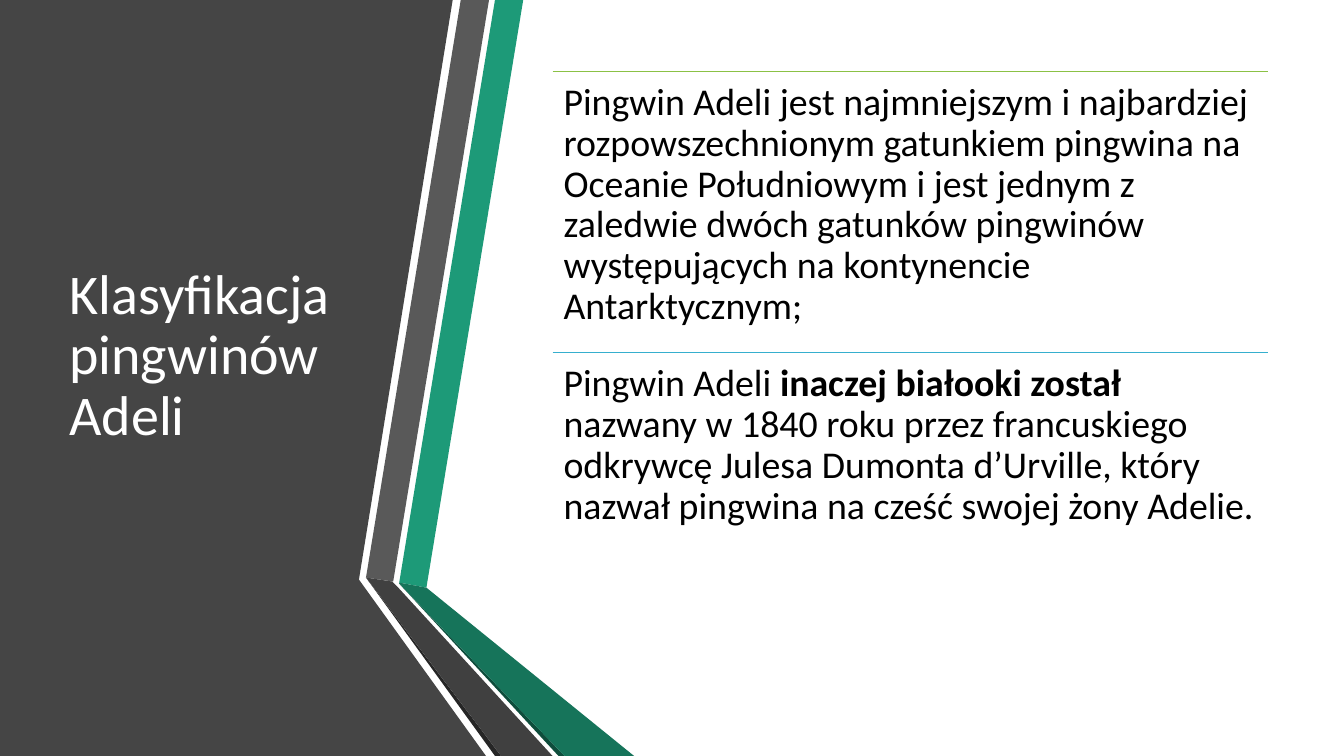
from lxml.etree import SubElement
from pptx import Presentation
from pptx.dml.color import RGBColor
from pptx.enum.shapes import MSO_CONNECTOR as CONN
from pptx.enum.text import MSO_ANCHOR as ANCHOR
from pptx.oxml.ns import qn
from pptx.util import Inches, Pt


def rgb(hex_color):
    return RGBColor.from_string(hex_color)


def add_text(box, runs, size, color, inset=0.1, anchor=ANCHOR.TOP, after=0):
    tf = s.shapes.add_textbox(*[Inches(v) for v in box]).text_frame
    tf.word_wrap = True
    tf.vertical_anchor = anchor
    tf.margin_left = tf.margin_right = Inches(inset)
    tf.margin_top = tf.margin_bottom = Inches(inset)
    p = tf.paragraphs[0]
    p.line_spacing = 0.9
    p.space_after = Pt(after)
    for text, bold in runs:
        r = p.add_run()
        r.text = text
        r.font.name = "Calibri"
        r.font.size = Pt(size)
        r.font.bold = bold
        r.font.color.rgb = rgb(color)


W, H = 13.33, 7.5
prs = Presentation()
prs.slide_width, prs.slide_height = Inches(W), Inches(H)
s = prs.slides.add_slide(prs.slide_layouts[6])
s.background.fill.solid()
s.background.fill.fore_color.rgb = rgb("FFFFFF")

panel = ("454545", [(0, 0), (4.49, 0), (3.56, 5.75), (4.82, H), (0, H)])
ribbons = [
    ("1D9A78", [(3.96, 5.78), (4.23, 5.83), (5.19, 0), (4.91, 0)]),
    ("595959", [(4.85, 0), (4.57, 0), (3.63, 5.73), (3.9, 5.77)]),
    ("262626", [(3.63, 5.73), (4.91, H), (4.97, H)]),
    ("0E4D3C", [(3.96, 5.79), (5.54, H), (5.6, H)]),
    ("16745A", [(3.96, 5.79), (5.6, H), (6.29, H), (4.23, 5.83), (3.96, 5.78)]),
    ("404040", [(5.48, H), (3.95, 5.83), (3.89, 5.77), (3.63, 5.73), (4.97, H)]),
]
for color, points in [panel, *ribbons]:
    start, *rest = [(Inches(x), Inches(y)) for x, y in points]
    fb = s.shapes.build_freeform(*start)
    fb.add_line_segments(rest, close=True)
    sp = fb.convert_to_shape()
    sp.shadow.inherit = False
    sp.fill.solid()
    sp.fill.fore_color.rgb = rgb(color)
    sp.line.fill.background()

add_text((0.59, H / 10, 3.04, 5.58), [("Klasyfikacja pingwinów Adeli", False)],
         40, "FFFFFF", inset=0.1, anchor=ANCHOR.MIDDLE)

left, top, width, row_height = 5.48, 0.71, 7.1, 2.79
rows = [
    ("8BC145", [
        ("Pingwin Adeli jest najmniejszym i najbardziej rozpowszechnionym "
         "gatunkiem pingwina na Oceanie Południowym i jest jednym "
         "z zaledwie dwóch gatunków pingwinów występujących "
         "na kontynencie Antarktycznym;", False)]),
    ("36AFCE", [
        ("Pingwin Adeli ", False),
        ("inaczej białooki został ", True),
        ("nazwany w 1840 roku przez francuskiego odkrywcę Julesa Dumonta "
         "d’Urville, który nazwał pingwina na cześć swojej żony Adelie.", False)]),
]
for i, (color, runs) in enumerate(rows):
    y = top + i * row_height
    rule = s.shapes.add_connector(CONN.STRAIGHT, Inches(left), Inches(y),
                                  Inches(left + width), Inches(y))
    rule.line.color.rgb = rgb(color)
    rule.line.width = Pt(1)
    SubElement(rule._element.spPr, qn("a:effectLst"))
    add_text((left, y, width, row_height), runs, 27, "000000", inset=0.11, after=9.45)

prs.save("out.pptx")
